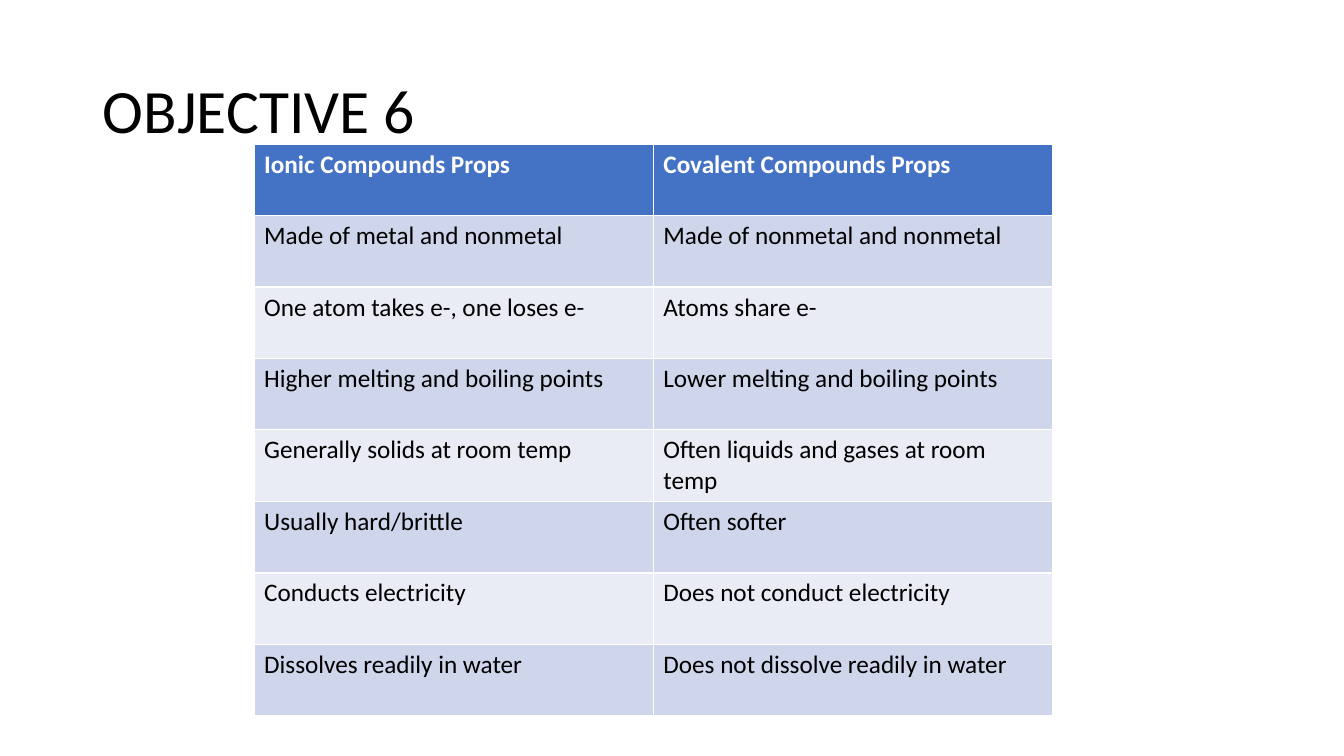
from pptx import Presentation
from pptx.dml.color import RGBColor
from pptx.enum.text import MSO_ANCHOR, PP_ALIGN
from pptx.util import Inches, Pt

BLACK = RGBColor(0x00, 0x00, 0x00)
WHITE = RGBColor(0xFF, 0xFF, 0xFF)
BLUE = RGBColor(0x44, 0x72, 0xC4)
BAND_DARK = RGBColor(0xCF, 0xD5, 0xEA)
BAND_LIGHT = RGBColor(0xE9, 0xEB, 0xF5)
FONT = "Calibri"

ROWS = [
    ("Ionic Compounds Props", "Covalent Compounds Props"),
    ("Made of metal and nonmetal", "Made of nonmetal and nonmetal"),
    ("One atom takes e-, one loses e-", "Atoms share e-"),
    ("Higher melting and boiling points", "Lower melting and boiling points"),
    ("Generally solids at room temp", "Often liquids and gases at room temp"),
    ("Usually hard/brittle", "Often softer"),
    ("Conducts electricity", "Does not conduct electricity"),
    ("Dissolves readily in water", "Does not dissolve readily in water"),
]

prs = Presentation()
prs.slide_width, prs.slide_height = Inches(13.33), Inches(7.5)
s = prs.slides.add_slide(prs.slide_layouts[5])

title = s.shapes.title
title.left, title.top = Inches(0.92), Inches(0.4)
title.width, title.height = Inches(11.5), Inches(1.45)
tf = title.text_frame
tf.text = "OBJECTIVE 6"
tf.vertical_anchor = MSO_ANCHOR.MIDDLE
p = tf.paragraphs[0]
p.alignment = PP_ALIGN.LEFT
p.line_spacing = 0.9
r = p.runs[0]
r.font.name, r.font.size = FONT, Pt(44)
r.font.color.rgb = BLACK

table = s.shapes.add_table(len(ROWS), 2, Inches(2.52), Inches(1.43),
                           Inches(7.92), Inches(5.67)).table

for i, row in enumerate(ROWS):
    header = i == 0
    band = BAND_DARK if i % 2 else BAND_LIGHT
    for j, text in enumerate(row):
        cell = table.cell(i, j)
        cell.fill.solid()
        cell.fill.fore_color.rgb = BLUE if header else band
        cell.text_frame.text = text
        r = cell.text_frame.paragraphs[0].runs[0]
        r.font.name, r.font.size = FONT, Pt(18)
        r.font.bold = header
        r.font.color.rgb = WHITE if header else BLACK

prs.save("out.pptx")
